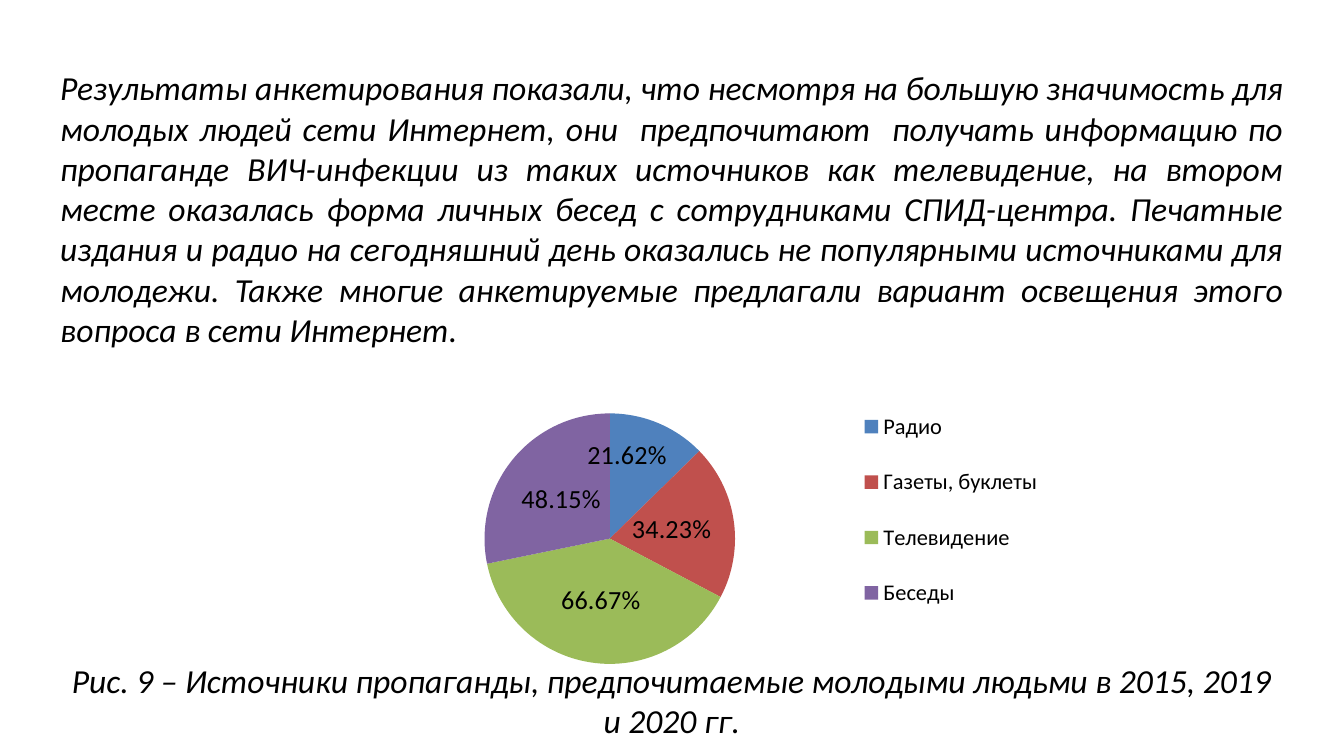
from lxml import etree
from pptx import Presentation
from pptx.chart.data import CategoryChartData
from pptx.dml.color import RGBColor
from pptx.enum.chart import XL_CHART_TYPE as ChartType
from pptx.enum.chart import XL_LABEL_POSITION as LabelPos
from pptx.enum.chart import XL_LEGEND_POSITION as LegendPos
from pptx.enum.text import MSO_AUTO_SIZE as AutoSize
from pptx.enum.text import PP_ALIGN as Align
from pptx.oxml.ns import qn
from pptx.util import Inches, Pt

BLACK = RGBColor(0x00, 0x00, 0x00)
BLUE = RGBColor(0x4F, 0x81, 0xBD)
RED = RGBColor(0xC0, 0x50, 0x4D)
GREEN = RGBColor(0x9B, 0xBB, 0x59)
PURPLE = RGBColor(0x80, 0x64, 0xA2)

FINDINGS = (
    "Результаты анкетирования показали, что несмотря на большую значимость "
    "для молодых людей сети Интернет, они  предпочитают  получать информацию "
    "по пропаганде ВИЧ-инфекции из таких источников как телевидение, на втором "
    "месте оказалась форма личных бесед с сотрудниками СПИД-центра. Печатные "
    "издания и радио на сегодняшний день оказались не популярными источниками "
    "для молодежи. Также многие анкетируемые предлагали вариант освещения "
    "этого вопроса в сети Интернет."
)
CAPTION = (
    "Рис. 9 – Источники пропаганды, предпочитаемые молодыми людьми "
    "в 2015, 2019 и 2020 гг."
)
SOURCES = [
    ("Радио", 0.2162, BLUE),
    ("Газеты, буклеты", 0.3423, RED),
    ("Телевидение", 0.6667, GREEN),
    ("Беседы", 0.4815, PURPLE),
]
PERCENT = "0.00%"


def format_font(font, size, italic=False):
    font.name = "Calibri"
    font.size = Pt(size)
    font.italic = italic
    font.color.rgb = BLACK


def add_run(p, text, **font_format):
    r = p.add_run()
    r.text = text
    format_font(r.font, **font_format)


def set_layout(parent, index, **values):
    """Give a chart part a manual layout in fractions of the chart."""
    for old in parent.findall(qn("c:layout")):
        parent.remove(old)
    layout = etree.Element(qn("c:layout"))
    manual = etree.SubElement(layout, qn("c:manualLayout"))
    for tag, val in values.items():
        etree.SubElement(manual, qn(f"c:{tag}")).set("val", str(val))
    parent.insert(index, layout)


class SlideBuilder:
    """Holds the current slide and adds styled elements to it."""

    def __init__(self, slide):
        self.s = slide

    def text(self, left, top, width, height, text, align):
        box = self.s.shapes.add_textbox(
            Inches(left), Inches(top), Inches(width), Inches(height))
        tf = box.text_frame
        tf.word_wrap = True
        tf.auto_size = AutoSize.SHAPE_TO_FIT_TEXT
        p = tf.paragraphs[0]
        p.alignment = align
        add_run(p, text, size=18, italic=True)

    def pie(self, left, top, width, height, rows):
        names, values, colors = zip(*rows)
        data = CategoryChartData(number_format=PERCENT)
        data.categories = names
        data.add_series("Series 1", values)
        chart = self.s.shapes.add_chart(
            ChartType.PIE, Inches(left), Inches(top),
            Inches(width), Inches(height), data).chart
        format_font(chart.font, 10)
        chart.has_title = False
        chart.has_legend = True
        legend = chart.legend
        legend.position = LegendPos.RIGHT
        legend.include_in_layout = False
        format_font(legend.font, 12)

        plot = chart.plots[0]
        plot.vary_by_categories = True
        series = plot.series[0]
        for i, color in enumerate(colors):
            fill = series.points[i].format.fill
            fill.solid()
            fill.fore_color.rgb = color

        labels = series.data_labels
        labels.show_value = True
        labels.number_format = PERCENT
        labels.number_format_is_linked = False
        labels.position = LabelPos.CENTER
        format_font(labels.font, 14)
        self.raise_first_label(chart, series)

        set_layout(chart.element.find(".//" + qn("c:plotArea")), 0,
                   layoutTarget="inner", xMode="edge", yMode="edge",
                   x=0.14, y=0.17, w=0.37, h=0.78)
        set_layout(chart.element.find(".//" + qn("c:legend")), 1,
                   xMode="edge", yMode="edge", x=0.68, y=0.08, w=0.28, h=0.78)

    def raise_first_label(self, chart, series):
        label = series.points[0].data_label
        label.position = LabelPos.CENTER
        format_font(label.font, 14)
        node = chart.element.find(".//" + qn("c:dLbl"))
        set_layout(node, 1, x=-0.01, y=-0.08)
        fmt = etree.Element(qn("c:numFmt"), formatCode=PERCENT, sourceLinked="0")
        node.insert(2, fmt)


def main():
    prs = Presentation()
    prs.slide_width = Inches(10)
    prs.slide_height = prs.slide_width * 9 // 16
    builder = SlideBuilder(prs.slides.add_slide(prs.slide_layouts[6]))
    builder.text(0.35, 0.45, 9.3, 2.22, FINDINGS, Align.JUSTIFY)
    builder.pie(2.87, 2.67, 5.13, 2.39, SOURCES)
    builder.text(0.35, 4.86, 9.3, 0.71, CAPTION, Align.CENTER)
    prs.save("out.pptx")


if __name__ == "__main__":
    main()
